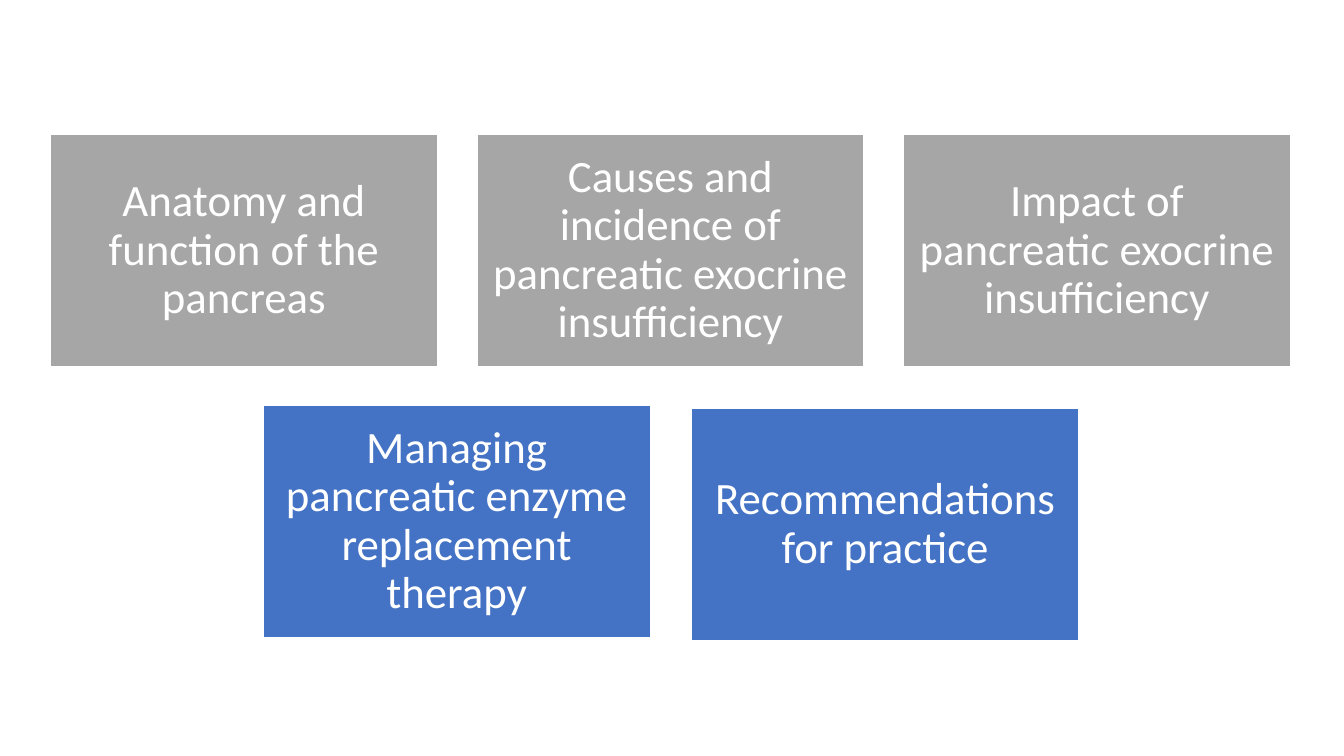
from dataclasses import dataclass

from pptx import Presentation
from pptx.dml.color import RGBColor
from pptx.enum.shapes import MSO_SHAPE
from pptx.enum.text import MSO_ANCHOR, PP_ALIGN
from pptx.util import Inches, Pt


@dataclass(frozen=True)
class Theme:
    covered: RGBColor = RGBColor(0xA6, 0xA6, 0xA6)
    upcoming: RGBColor = RGBColor(0x44, 0x72, 0xC4)
    white: RGBColor = RGBColor(0xFF, 0xFF, 0xFF)
    font: str = "Calibri"
    topic_size: Pt = Pt(32)
    outline: Pt = Pt(1)


theme = Theme()
TOPIC_WIDTH, TOPIC_HEIGHT = 3.84, 2.31
INSET = Inches(0.13)


def write_text(frame, text, *, size, color, font, align, line_spacing):
    frame.word_wrap = True
    frame.vertical_anchor = MSO_ANCHOR.MIDDLE
    frame.margin_left = frame.margin_right = INSET
    frame.margin_top = frame.margin_bottom = INSET
    paragraph = frame.paragraphs[0]
    paragraph.alignment = align
    paragraph.line_spacing = line_spacing
    run = paragraph.add_run()
    run.text = text
    run.font.size = size
    run.font.name = font
    run.font.color.rgb = color


presentation = Presentation()
presentation.slide_width = Inches(13.33)
presentation.slide_height = Inches(7.5)
slide = presentation.slides.add_slide(presentation.slide_layouts[6])

# Each row: left edge, column pitch, top edge, step down per column, fill, topics
agenda_rows = [
    (0.5, 4.23, 1.33, 0, theme.covered, [
        "Anatomy and function of the pancreas",
        "Causes and incidence of pancreatic exocrine insufficiency",
        "Impact of pancreatic exocrine insufficiency",
    ]),
    (2.61, 4.25, 4.02, 0.03, theme.upcoming, [
        "Managing pancreatic enzyme replacement therapy",
        "Recommendations for practice",
    ]),
]

for left, pitch, top, step, fill, topics in agenda_rows:
    for column, topic in enumerate(topics):
        tile = slide.shapes.add_shape(
            MSO_SHAPE.RECTANGLE,
            Inches(left + column * pitch), Inches(top + column * step),
            Inches(TOPIC_WIDTH), Inches(TOPIC_HEIGHT),
        )
        tile.shadow.inherit = False
        tile.fill.solid()
        tile.fill.fore_color.rgb = fill
        tile.line.color.rgb = theme.white
        tile.line.width = theme.outline
        write_text(
            tile.text_frame, topic, size=theme.topic_size, color=theme.white,
            font=theme.font, align=PP_ALIGN.CENTER, line_spacing=0.9,
        )

presentation.save("out.pptx")
